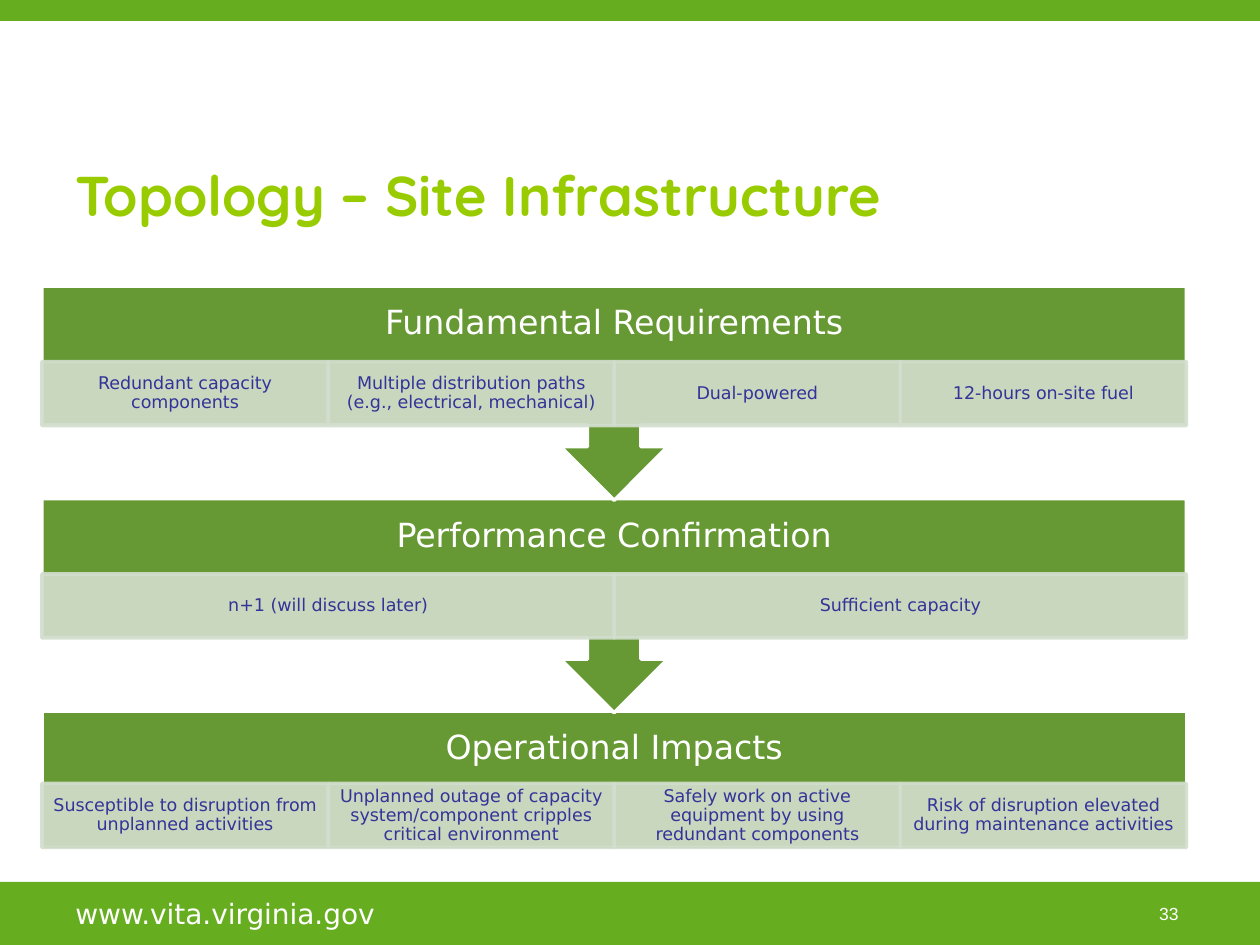
import pptx
import pptx.util
import pptx.dml.color
import pptx.enum.shapes
import pptx.enum.text
import pptx.oxml.ns
import lxml.etree

Pt = pptx.util.Pt
Kind = pptx.enum.shapes.MSO_SHAPE
Align = pptx.enum.text.PP_ALIGN
Anchor = pptx.enum.text.MSO_ANCHOR

theme = {
    "bar": "66AE20", "title": "99CC00", "band": "669933",
    "cell": "D3DECE", "ink": "333399", "white": "FFFFFF",
    "title_size": 32, "head_size": 19, "link_size": 16, "cell_size": 10,
    "font": "DejaVu Sans", "title_font": "Quicksand", "page_font": "Arial",
}


def block(kind, left, top, width, height, fill, line=None):
    shape = slide.shapes.add_shape(kind, Pt(left), Pt(top), Pt(width), Pt(height))
    shape.shadow.inherit = False
    shape.fill.solid()
    shape.fill.fore_color.rgb = pptx.dml.color.RGBColor.from_string(theme[fill])
    if line:
        shape.line.color.rgb = pptx.dml.color.RGBColor.from_string(theme[line])
        shape.line.width = Pt(2)
    else:
        shape.line.fill.background()
    return shape


def write(shape, text, size, color, font="font", align=Align.CENTER,
          inset=(0, 0, 0, 0), anchor=Anchor.MIDDLE, wrap=True):
    frame = shape.text_frame
    frame.word_wrap = wrap
    frame.auto_size = pptx.enum.text.MSO_AUTO_SIZE.NONE
    frame.vertical_anchor = anchor
    (frame.margin_left, frame.margin_top,
     frame.margin_right, frame.margin_bottom) = [Pt(side) for side in inset]
    frame.text = text
    para = frame.paragraphs[0]
    para.alignment = align
    para.font.name = theme[font]
    para.font.size = Pt(theme[size])
    para.font.color.rgb = pptx.dml.color.RGBColor.from_string(theme[color])
    return para


deck = pptx.Presentation()
deck.slide_width = Pt(720)
deck.slide_height = Pt(540)
slide = deck.slides.add_slide(deck.slide_layouts[5])

block(Kind.RECTANGLE, 0, 504, 720, 36, "bar")
block(Kind.RECTANGLE, 0, 0, 720, 12, "bar")

title = slide.shapes.title
title.left, title.top, title.width, title.height = Pt(36), Pt(78), Pt(664.5), Pt(66)
para = write(title, "Topology – Site Infrastructure", "title_size", "title",
             "title_font", Align.LEFT, (7.2, 3.6, 7.2, 3.6))
para.font.bold = True

page = slide.shapes.add_textbox(Pt(660), Pt(515), Pt(16), Pt(14))
write(page, "33", "cell_size", "white", "page_font", wrap=False)
link = slide.shapes.add_textbox(Pt(36), Pt(509), Pt(192), Pt(25))
write(link, "www.vita.virginia.gov", "link_size", "white", align=Align.LEFT,
      inset=(7.2, 3.6, 7.2, 3.6), anchor=Anchor.TOP, wrap=False)

bands = [
    ("Fundamental Requirements", Kind.DOWN_ARROW_CALLOUT, 122.4, 43.1, [
        "Redundant capacity components",
        "Multiple distribution paths (e.g., electrical, mechanical)",
        "Dual-powered",
        "12-hours on-site fuel"]),
    ("Performance Confirmation", Kind.DOWN_ARROW_CALLOUT, 122.4, 43.1, [
        "n+1 (will discuss later)",
        "Sufficient capacity"]),
    ("Operational Impacts", Kind.RECTANGLE, 79.6, 41.4, [
        "Susceptible to disruption from unplanned activities",
        "Unplanned outage of capacity system/component cripples critical environment",
        "Safely work on active equipment by using redundant components",
        "Risk of disruption elevated during maintenance activities"]),
]
left, wide, first, step, tall = 24, 654, 163.5, 121.4, 36.6

for row, (head, kind, height, drop, items) in reversed(list(enumerate(bands))):
    top = first + row * step
    band = block(kind, left, top, wide, height, "band", "white")
    para = write(band, head, "head_size", "white", inset=(10.8, 0, 10.8, 36.4))
    para.line_spacing = 0.9
    width = wide / len(items)
    for col, item in enumerate(items):
        cell = block(Kind.RECTANGLE, left + col * width, top + drop, width, tall,
                     "cell", "cell")
        for color in cell._element.spPr.iter(pptx.oxml.ns.qn("a:srgbClr")):
            lxml.etree.SubElement(color, pptx.oxml.ns.qn("a:alpha"), val="90000")
        para = write(cell, item, "cell_size", "ink", inset=(5.8, 0.9, 5.8, 0.9))
        para.line_spacing = 0.9

deck.save("out.pptx")
